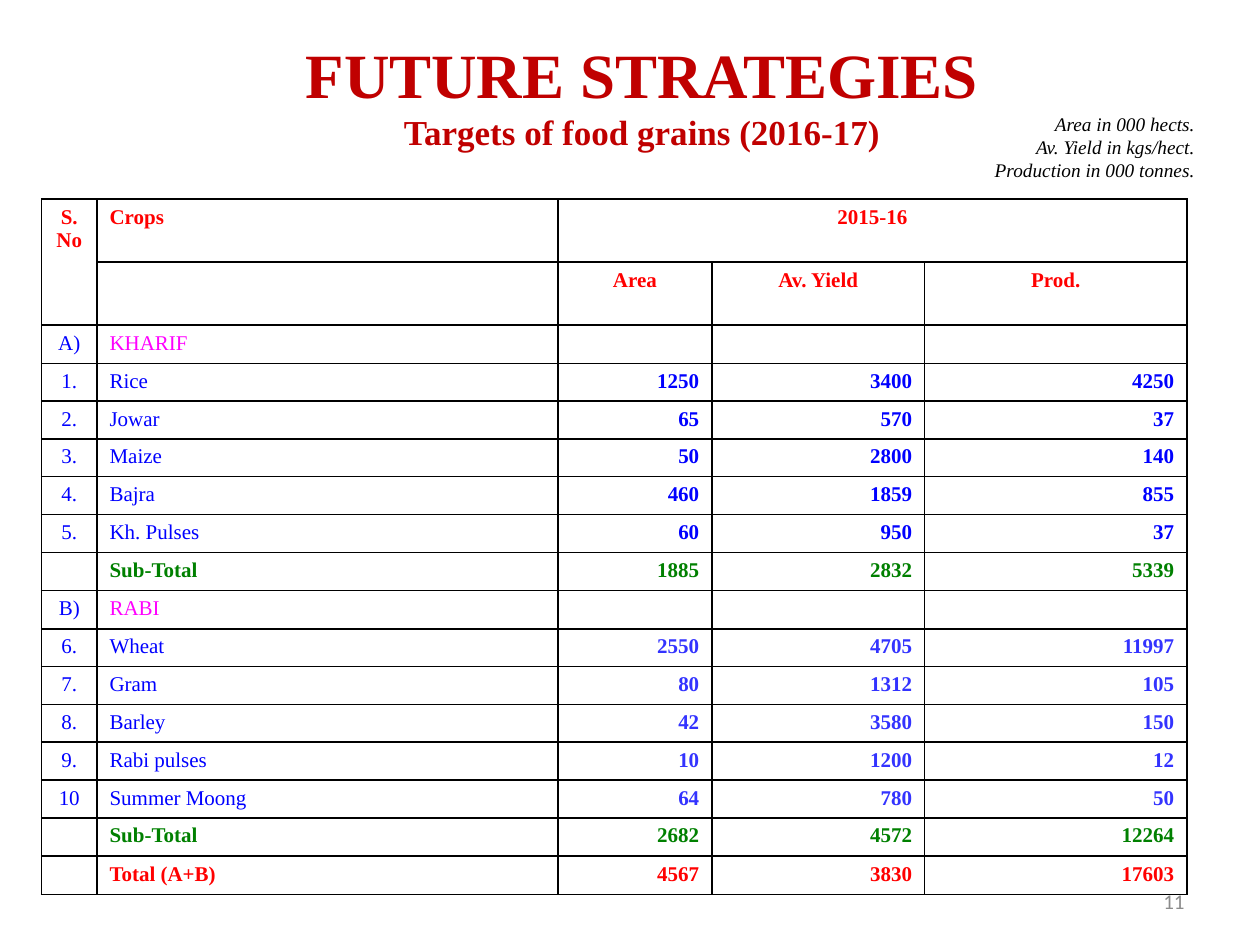
"""Build the food grain targets slide."""
import pptx
import pptx.dml.color
import pptx.enum.text
import pptx.oxml.ns
import pptx.util
from lxml import etree

Inches, Pt = pptx.util.Inches, pptx.util.Pt
qn = pptx.oxml.ns.qn
ALIGN = pptx.enum.text.PP_ALIGN
ANCHOR = pptx.enum.text.MSO_ANCHOR

SERIF = "Times New Roman"
DARK_RED, RED, BLUE, SOFT_BLUE = "C00000", "FF0000", "0000FF", "3333FF"
MAGENTA, GREEN, BLACK, WHITE, GREY = "FF00FF", "008000", "000000", "FFFFFF", "8C8C8C"

HEADER = [("S. No", "Crops", "2015-16", "", ""),
          ("", "", "Area", "Av. Yield", "Prod.")]
KHARIF = [("1.", "Rice", "1250", "3400", "4250"),
          ("2.", "Jowar", "65", "570", "37"),
          ("3.", "Maize", "50", "2800", "140"),
          ("4.", "Bajra", "460", "1859", "855"),
          ("5.", "Kh. Pulses", "60", "950", "37")]
RABI = [("6.", "Wheat", "2550", "4705", "11997"),
        ("7.", "Gram", "80", "1312", "105"),
        ("8.", "Barley", "42", "3580", "150"),
        ("9.", "Rabi pulses", "10", "1200", "12"),
        ("10", "Summer Moong", "64", "780", "50")]
BLOCKS = [("header", HEADER),
          ("season", [("A)", "KHARIF", "", "", "")]),
          ("kharif", KHARIF),
          ("subtotal", [("", "Sub-Total", "1885", "2832", "5339")]),
          ("season", [("B)", "RABI", "", "", "")]),
          ("rabi", RABI),
          ("subtotal", [("", "Sub-Total", "2682", "4572", "12264")]),
          ("total", [("", "Total (A+B)", "4567", "3830", "17603")])]
STYLES = {  # number colour, crop colour, value colour, bold crop, fill
    "header": (RED, RED, RED, True, WHITE),
    "season": (BLUE, MAGENTA, BLUE, False, None),
    "kharif": (BLUE, BLUE, BLUE, False, None),
    "rabi": (BLUE, BLUE, SOFT_BLUE, False, None),
    "subtotal": (GREEN, GREEN, GREEN, True, WHITE),
    "total": (RED, RED, RED, True, None),
}
COLS = [0.44, 3.66, 1.22, 1.69, 2.08]
HEADER_H, ROW_H = 0.5, 0.3


def rgb(value):
    """Turn a hex string into a colour."""
    return pptx.dml.color.RGBColor.from_string(value)


def write(p, text, size=12, color=BLACK, font=SERIF, bold=False, italic=False,
          align=ALIGN.LEFT):
    """Write formatted text into a paragraph."""
    p.alignment = align
    p.text = text
    for r in p.runs:
        f = r.font
        f.size, f.name, f.bold, f.italic = Pt(size), font, bold, italic
        f.color.rgb = rgb(color)
    if not text:
        etree.SubElement(p._p, qn("a:endParaRPr"), sz=str(size * 100))


def place(sp, left, top, width, height, anchor):
    """Position a text shape and return its text frame."""
    sp.left, sp.top, sp.width, sp.height = map(Inches, (left, top, width, height))
    tf = sp.text_frame
    tf.word_wrap, tf.vertical_anchor = True, anchor
    return tf


def add_text(s, box, anchor):
    """Add a text box and return its text frame."""
    return place(s.shapes.add_textbox(0, 0, 0, 0), *box, anchor)


def style_cell(cell, fill):
    """Give a cell black borders and its fill."""
    tcPr = cell._tc.get_or_add_tcPr()
    for side in ("lnL", "lnR", "lnT", "lnB"):
        ln = etree.SubElement(tcPr, qn(f"a:{side}"), w=str(Pt(1)))
        solid = etree.SubElement(ln, qn("a:solidFill"))
        etree.SubElement(solid, qn("a:srgbClr"), val=BLACK)
    if fill:
        cell.fill.solid()
        cell.fill.fore_color.rgb = rgb(fill)
    else:
        cell.fill.background()


def add_targets(s):
    """Add the crop targets table."""
    rows = [(kind, row) for kind, block in BLOCKS for row in block]
    heights = [HEADER_H if kind == "header" else ROW_H for kind, _ in rows]
    table = s.shapes.add_table(len(rows), len(COLS), Inches(0.33), Inches(1.58),
                               Inches(sum(COLS)), Inches(sum(heights))).table
    table.first_row = table.horz_banding = False
    for col, width in zip(table.columns, COLS):
        col.width = Inches(width)
    for i, (kind, row) in enumerate(rows):
        table.rows[i].height = Inches(heights[i])
        number, crop, value, bold_crop, fill = STYLES[kind]
        header = kind == "header"
        value_align = ALIGN.CENTER if header else ALIGN.RIGHT
        formats = [(number, header, ALIGN.CENTER), (crop, bold_crop, ALIGN.LEFT)]
        formats += [(value, True, value_align)] * 3
        for j, (text, (color, bold, align)) in enumerate(zip(row, formats)):
            cell = table.cell(i, j)
            style_cell(cell, fill)
            write(cell.text_frame.paragraphs[0], text, color=color, bold=bold,
                  align=align)
    table.cell(0, 0).merge(table.cell(1, 0))
    table.cell(0, 2).merge(table.cell(0, 4))


def main():
    """Assemble and save the slide."""
    prs = pptx.Presentation()
    prs.slide_width, prs.slide_height = Inches(10), Inches(7.5)
    s = prs.slides.add_slide(prs.slide_layouts[5])

    tf = place(s.shapes.title, 1.05, 0.23, 8.09, 1.03, ANCHOR.MIDDLE)
    title = {"color": DARK_RED, "bold": True, "align": ALIGN.CENTER}
    write(tf.paragraphs[0], "FUTURE STRATEGIES", size=36, **title)
    write(tf.add_paragraph(), "Targets of food grains (2016-17)", size=20, **title)

    add_targets(s)

    tf = add_text(s, (5.75, 0.84, 3.83, 0.65), ANCHOR.TOP)
    units = {"size": 11, "italic": True, "align": ALIGN.RIGHT}
    write(tf.paragraphs[0], "Area in 000 hects.\vAv. Yield in kgs/hect.", **units)
    write(tf.add_paragraph(), "Production in 000 tonnes.", **units)

    tf = add_text(s, (7.17, 6.95, 2.33, 0.4), ANCHOR.MIDDLE)
    write(tf.paragraphs[0], "11", color=GREY, font="Calibri", align=ALIGN.RIGHT)
    prs.save("out.pptx")


if __name__ == "__main__":
    main()
